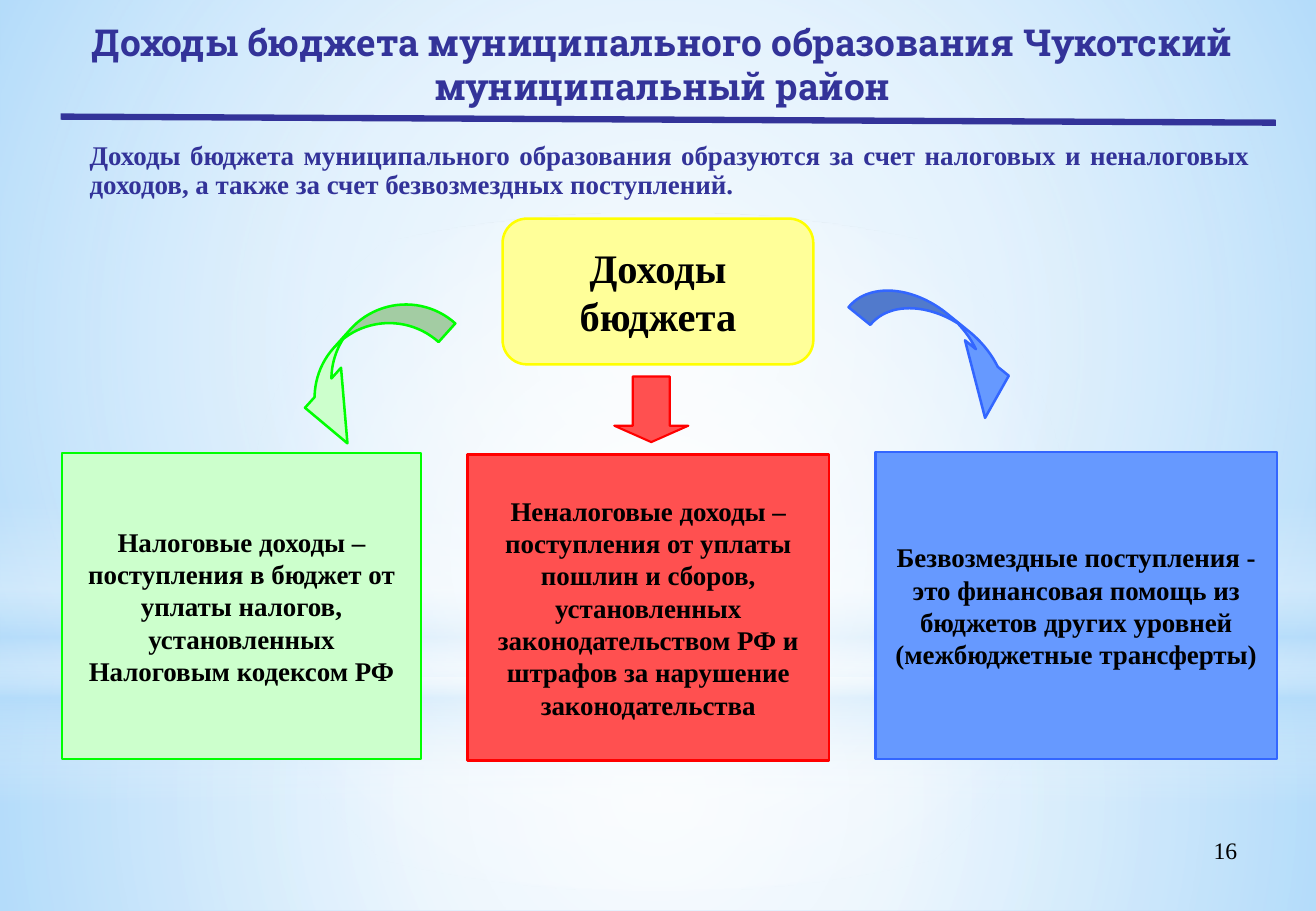
import pptx
import pptx.util
import pptx.dml.color
import pptx.enum.shapes
import pptx.enum.text
import pptx.oxml.ns
from lxml import etree

Inches = pptx.util.Inches
Pt = pptx.util.Pt
Shape = pptx.enum.shapes.MSO_SHAPE
Align = pptx.enum.text.PP_ALIGN
Anchor = pptx.enum.text.MSO_ANCHOR
qn = pptx.oxml.ns.qn

# Content
TITLE = "Доходы бюджета муниципального образования Чукотский муниципальный район"
INTRO = ("Доходы бюджета муниципального образования образуются за счет налоговых "
         "и неналоговых доходов, а также за счет безвозмездных поступлений.")
TOTAL = "Доходы бюджета"
PAGE_NUMBER = "16"

# name: text, box place, side inset, arrow shape, arrow place, rotation, adjustments, arrow line
INCOMES = {
    "tax": ("Налоговые доходы – поступления в бюджет от уплаты налогов, "
            "установленных Налоговым кодексом РФ",
            (0.51, 3.73, 2.96, 2.52), 0.12,
            Shape.CURVED_UP_ARROW, (2.23, 2.73, 1.55, 0.61), 132, (0.338, 0.727, 0.747), 1.5),
    "nontax": ("Неналоговые доходы – поступления от уплаты пошлин и сборов, "
               "установленных законодательством РФ и штрафов за нарушение законодательства",
               (3.85, 3.74, 2.98, 2.52), 0,
               Shape.DOWN_ARROW, (5.06, 3.1, 0.61, 0.54), 0, (0.5, 0.25), 1.25),
    "grants": ("Безвозмездные поступления - это финансовая помощь из бюджетов "
               "других уровней (межбюджетные трансферты)",
               (7.21, 3.72, 3.31, 2.53), 0.12,
               Shape.CURVED_DOWN_ARROW, (6.95, 2.64, 1.68, 0.47), 39, (0.492, 0.987, 0.834), 1.5),
}

THEME = {
    "heading": "Roboto Slab", "body": "Times New Roman",
    "accent": "333399", "ink": "000000", "sky": "B4DCFA", "white": "FFFFFF",
    "size_title": 22, "size_text": 16, "size_total": 24, "size_number": 14,
    "total": ("FFFF99", "FFFF00"),          # fill, line
    "tax": ("CCFFCC", "00FF00"),
    "nontax": ("FF5050", "FF0000"),
    "grants": ("6699FF", "3366FF"),
}

# Backdrop layers: shape, place, stops (position %, colour, opacity %), radial
WIDTH, HEIGHT = 10.84, 7.5
BACKDROP = [
    (Shape.RECTANGLE, (0, 5.58, WIDTH, 1.92),
     [(0, "white", 91), (37, "white", 76), (100, "sky", 79)], True),
    (Shape.RECTANGLE, (0, 0, WIDTH, 5.58),
     [(0, "white", 89), (48, "white", 62), (100, "sky", 79)], True),
    (Shape.RECTANGLE, (0, 4.12, WIDTH, 2.5),
     [(0, "white", 0), (29, "white", 30), (45, "sky", 40),
      (55, "white", 26), (65, "sky", 60), (100, "white", 0)], False),
    (Shape.OVAL, (0, 1.75, WIDTH, 5.58),
     [(0, "white", 100), (56, "white", 0)], True),
]


def rgb(code):
    return pptx.dml.color.RGBColor.from_string(code)


def add_figure(page, kind, place, colours=None, weight=1.5, adjustments=()):
    figure = page.shapes.add_shape(kind, *map(Inches, place))
    figure.shadow.inherit = False
    for index, value in enumerate(adjustments):
        figure.adjustments[index] = value
    if colours:
        figure.fill.solid()
        figure.fill.fore_color.rgb = rgb(colours[0])
        figure.line.color.rgb = rgb(colours[1])
        figure.line.width = Pt(weight)
    else:
        figure.line.fill.background()
    return figure


def add_gradient(figure, stops, radial):
    figure.fill.gradient()
    gradient = figure._element.spPr.find(qn("a:gradFill"))
    for child in list(gradient):
        gradient.remove(child)
    stop_list = etree.SubElement(gradient, qn("a:gsLst"))
    for position, colour, opacity in stops:
        stop = etree.SubElement(stop_list, qn("a:gs"), pos=str(position * 1000))
        tint = etree.SubElement(stop, qn("a:srgbClr"), val=THEME[colour])
        etree.SubElement(tint, qn("a:alpha"), val=str(opacity * 1000))
    if radial:
        shade = etree.SubElement(gradient, qn("a:path"), {"path": "circle"})
        etree.SubElement(shade, qn("a:fillToRect"),
                         {side: "50000" for side in "ltrb"})
    else:
        etree.SubElement(gradient, qn("a:lin"), ang="5400000", scaled="0")


def write(box, text, size, colour="ink", font="body", bold=True,
          align=Align.CENTER, anchor=Anchor.MIDDLE, insets=(0.1, 0.05)):
    frame = box.text_frame
    frame.word_wrap = True
    frame.vertical_anchor = anchor
    frame.margin_left = frame.margin_right = Inches(insets[0])
    frame.margin_top = frame.margin_bottom = Inches(insets[1])
    para = frame.paragraphs[0]
    para.text = text
    para.alignment = align
    para.font.name = THEME[font]
    para.font.size = Pt(THEME[size])
    para.font.bold = bold
    para.font.color.rgb = rgb(THEME[colour])
    return para


def add_text(page, place, *args, **options):
    return write(page.shapes.add_textbox(*map(Inches, place)), *args, **options)


def main():
    deck = pptx.Presentation()
    deck.slide_width, deck.slide_height = Inches(WIDTH), Inches(HEIGHT)
    page = deck.slides.add_slide(deck.slide_layouts[6])

    # Background
    page.background.fill.solid()
    page.background.fill.fore_color.rgb = rgb(THEME["sky"])
    for kind, place, stops, radial in BACKDROP:
        add_gradient(add_figure(page, kind, place), stops, radial)

    # Title, introduction and page number
    add_text(page, (0.58, 0.01, 9.75, 1.03), TITLE, "size_title", "accent", "heading")
    intro = add_text(page, (0.64, 1.12, 9.75, 0.58), INTRO, "size_text", "accent",
                     align=Align.JUSTIFY, anchor=Anchor.TOP)
    intro.line_spacing = 0.9
    intro.space_before = Pt(4)
    add_text(page, (7.76, 6.83, 2.53, 0.52), PAGE_NUMBER, "size_number",
             bold=False, align=Align.RIGHT, anchor=Anchor.TOP)

    # Total income
    total = add_figure(page, Shape.ROUNDED_RECTANGLE, (4.14, 1.8, 2.56, 1.2),
                       THEME["total"], adjustments=(0.167,))
    write(total, TOTAL, "size_total", insets=(0.14, 0.05))

    # Income kinds, each with its arrow
    for name, (text, place, inset, kind, arrow_place, turn, bends, weight) in INCOMES.items():
        box = add_figure(page, Shape.RECTANGLE, place, THEME[name])
        write(box, text, "size_text", insets=(inset, 0))
        arrow = add_figure(page, kind, arrow_place, THEME[name], weight, bends)
        arrow.rotation = turn

    # Rule under the title
    rule = page.shapes.add_connector(pptx.enum.shapes.MSO_CONNECTOR.STRAIGHT,
                                     *map(Inches, (0.5, 0.96, 10.51, 1.01)))
    rule.line.color.rgb = rgb(THEME["accent"])
    rule.line.width = Pt(3.75)
    etree.SubElement(rule._element.spPr, qn("a:effectLst"))

    deck.save("out.pptx")


if __name__ == "__main__":
    main()
